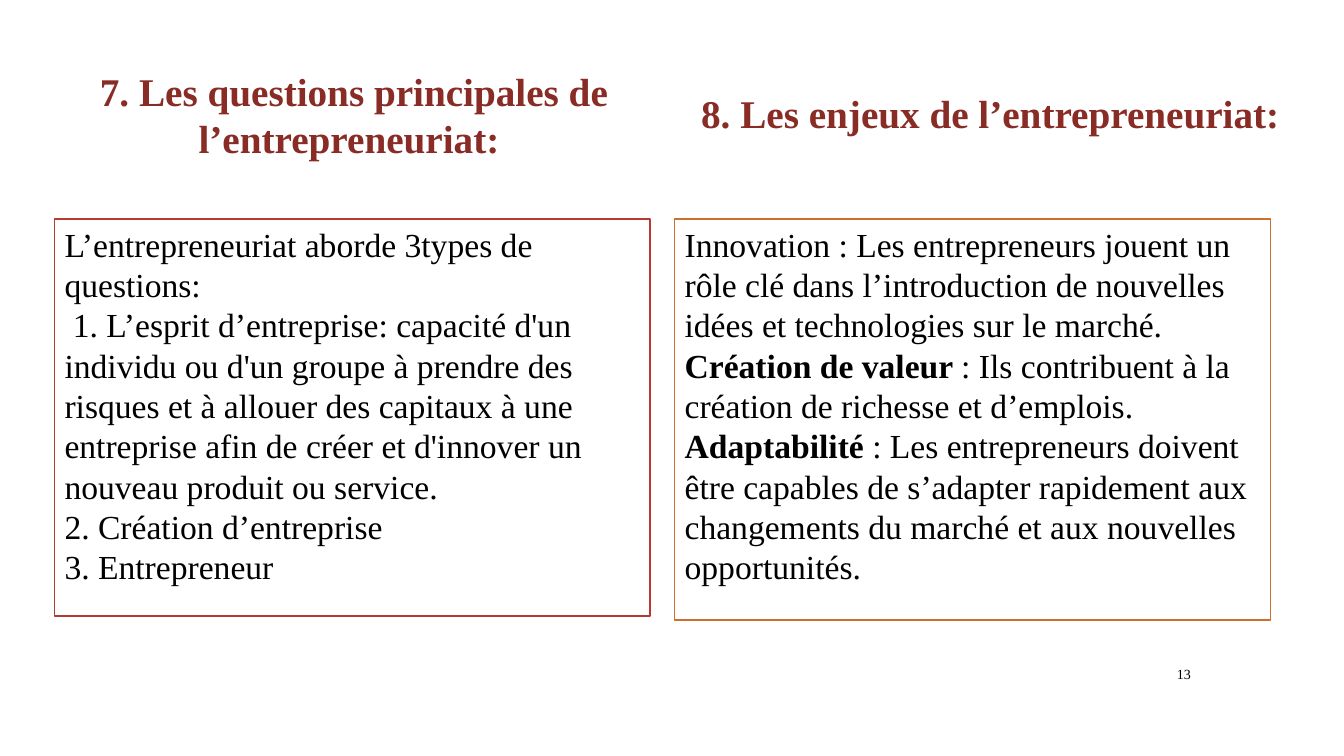
from dataclasses import dataclass

import pptx
import pptx.dml.color
import pptx.enum.text
import pptx.oxml
import pptx.oxml.ns
import pptx.util

ALIGN = pptx.enum.text.PP_ALIGN
ANCHOR = pptx.enum.text.MSO_ANCHOR


@dataclass(frozen=True)
class Theme:
    font: str = "Times New Roman"
    text: str = "000000"
    heading: str = "882C25"
    panel: str = "FFFFFF"
    red: str = "B53A31"
    orange: str = "CC702D"
    heading_size: int = 28
    body_size: int = 24
    number_size: int = 10
    border: float = 1.25


@dataclass(frozen=True)
class Area:
    """Position and size in percent of the slide."""
    left: float
    top: float
    width: float
    height: float


@dataclass(frozen=True)
class Span:
    text: str
    bold: bool = False


@dataclass(frozen=True)
class Style:
    size: int
    color: str
    align: ALIGN = ALIGN.LEFT
    anchor: ANCHOR = ANCHOR.TOP


@dataclass(frozen=True)
class Topic:
    heading: str
    heading_slot: int
    heading_area: Area
    body: list[list[Span]]
    body_slot: int
    body_area: Area
    border: str


THEME = Theme()
HEADING = Style(THEME.heading_size, THEME.heading, ALIGN.CENTER)
BODY = Style(THEME.body_size, THEME.text)
NUMBER = Style(THEME.number_size, THEME.text, ALIGN.RIGHT, ANCHOR.MIDDLE)
LEFT_COLUMN, RIGHT_COLUMN, PANEL_TOP, PANEL_WIDTH = 4.05, 50.19, 28.93, 44.34

TOPICS = [
    Topic(
        "7. Les questions principales de l’entrepreneuriat: ", 0,
        Area(5.25, 8.27, 42.16, 13.87),
        [
            [Span("L’entrepreneuriat aborde 3types de questions:")],
            [Span(" 1. L’esprit d’entreprise: capacité d'un individu ou d'un groupe "
                  "à prendre des risques et à allouer des capitaux à une entreprise "
                  "afin de créer et d'innover un nouveau produit ou service.")],
            [Span("2. Création d’entreprise")],
            [Span("3. Entrepreneur")],
        ], 2,
        Area(LEFT_COLUMN, PANEL_TOP, PANEL_WIDTH, 52.53), THEME.red),
    Topic(
        "8. Les enjeux de l’entrepreneuriat: ", 3,
        Area(RIGHT_COLUMN, 11.2, 47.71, 7.6),
        [
            [Span("Innovation : Les entrepreneurs jouent un rôle clé dans l’introduction "
                  "de nouvelles idées et technologies sur le marché.")],
            [Span("Création de valeur ", True),
             Span(": Ils contribuent à la création de richesse et d’emplois.")],
            [Span("Adaptabilité", True),
             Span(" : Les entrepreneurs doivent être capables de s’adapter rapidement "
                  "aux changements du marché et aux nouvelles opportunités.")],
        ], 4,
        Area(RIGHT_COLUMN, PANEL_TOP, PANEL_WIDTH, 53.07), THEME.orange),
]

deck = pptx.Presentation()
deck.slide_width = pptx.util.Inches(13.33)
deck.slide_height = pptx.util.Inches(7.5)


def rgb(color: str) -> pptx.dml.color.RGBColor:
    return pptx.dml.color.RGBColor.from_string(color)


def place(box, area: Area) -> None:
    box.left = round(deck.slide_width * area.left / 100)
    box.top = round(deck.slide_height * area.top / 100)
    box.width = round(deck.slide_width * area.width / 100)
    box.height = round(deck.slide_height * area.height / 100)


def write(box, paragraphs: list[list[Span]], style: Style) -> None:
    frame = box.text_frame
    frame.word_wrap = True
    frame.auto_size = pptx.enum.text.MSO_AUTO_SIZE.NONE
    frame.vertical_anchor = style.anchor
    for index, spans in enumerate(paragraphs):
        para = frame.add_paragraph() if index else frame.paragraphs[0]
        para.alignment = style.align
        para.space_before = pptx.util.Pt(0)
        # Plain paragraphs: no bullet, no hanging indent
        properties = para._p.get_or_add_pPr()
        properties.set("marL", "0")
        properties.set("indent", "0")
        properties.append(pptx.oxml.parse_xml(
            f"<a:buNone {pptx.oxml.ns.nsdecls('a')}/>"))
        for part in spans:
            span = para.add_run()
            span.text = part.text
            span.font.name = THEME.font
            span.font.size = pptx.util.Pt(style.size)
            span.font.bold = part.bold
            span.font.color.rgb = rgb(style.color)


def draw_topic(page, topic: Topic) -> None:
    slots = {slot.placeholder_format.idx: slot for slot in page.placeholders}
    heading, panel = slots[topic.heading_slot], slots[topic.body_slot]
    place(heading, topic.heading_area)
    write(heading, [[Span(topic.heading, True)]], HEADING)
    place(panel, topic.body_area)
    panel.fill.solid()
    panel.fill.fore_color.rgb = rgb(THEME.panel)
    panel.line.color.rgb = rgb(topic.border)
    panel.line.width = pptx.util.Pt(THEME.border)
    write(panel, topic.body, BODY)


# Two topics side by side, on the comparison layout
page = deck.slides.add_slide(deck.slide_layouts[4])
for topic in TOPICS:
    draw_topic(page, topic)

# Unused heading of the layout
used = {slot for topic in TOPICS for slot in (topic.heading_slot, topic.body_slot)}
for slot in list(page.placeholders):
    if slot.placeholder_format.idx not in used:
        slot.element.getparent().remove(slot.element)

# Page number
number = page.shapes.add_textbox(0, 0, 0, 0)
place(number, Area(84.92, 87.07, 4.43, 4.13))
write(number, [[Span("13")]], NUMBER)

deck.save("out.pptx")
